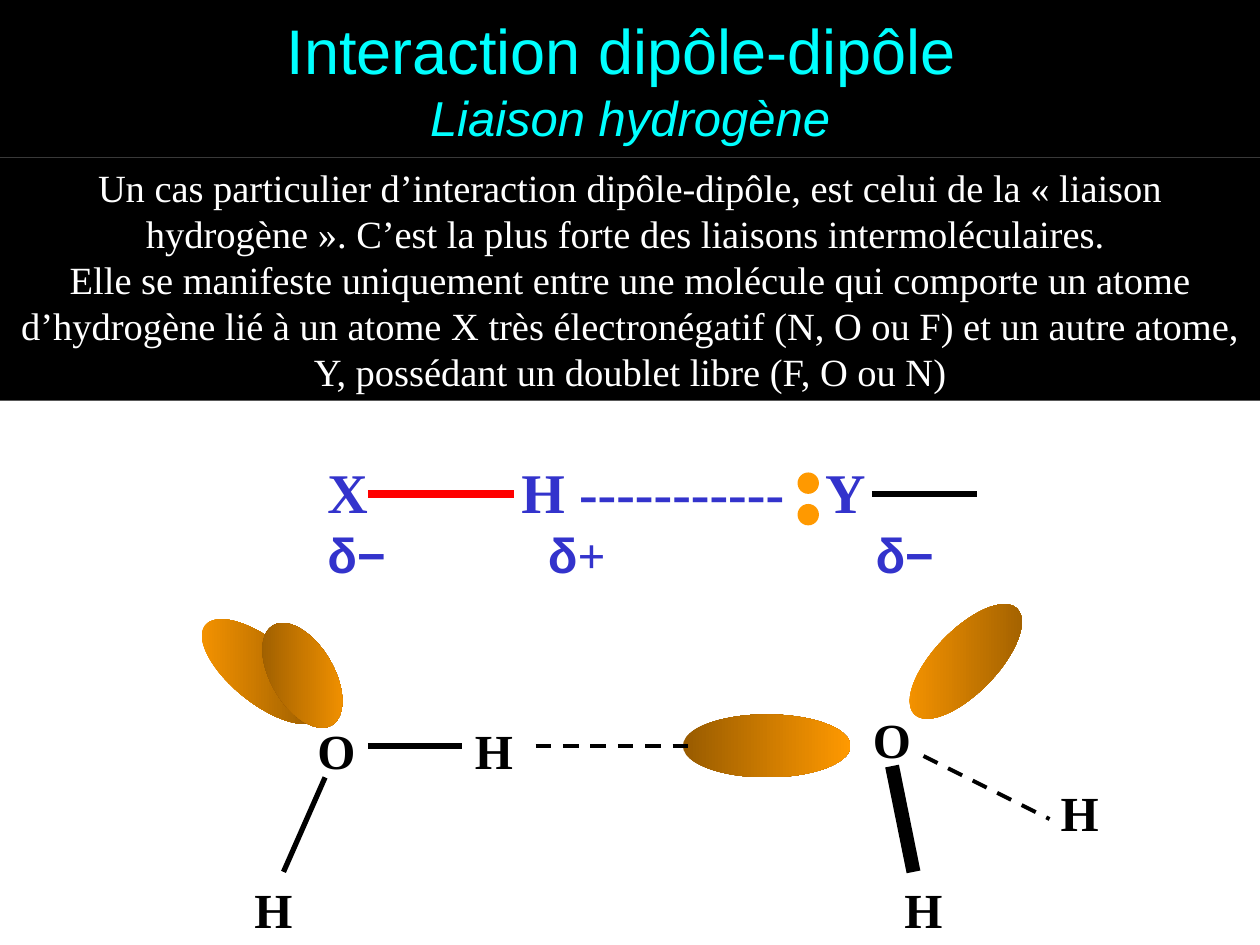
from dataclasses import dataclass

from pptx import Presentation
from pptx.dml.color import RGBColor
from pptx.enum import dml, shapes, text
from pptx.oxml import ns, xmlchemy
from pptx.util import Inches, Pt


@dataclass(frozen=True)
class Theme:
    black: str = "000000"
    white: str = "FFFFFF"
    title: str = "00FFFF"
    formula: str = "3333CC"
    polar_bond: str = "FF0000"
    doublet: str = "FF9900"
    sans: str = "Arial"
    serif: str = "Times New Roman"
    title_size: int = 36
    subtitle_size: int = 28
    body_size: int = 22
    formula_size: int = 32
    label_size: int = 28


THEME = Theme()


def rgb(value):
    return RGBColor.from_string(value)


def box(*values):
    return [Inches(value) for value in values]


def xml_child(parent, tag, **attributes):
    child = xmlchemy.OxmlElement(tag)
    for key, value in attributes.items():
        child.set(key, str(value))
    parent.append(child)
    return child


def add_run(paragraph, words, size, color, font=THEME.serif, bold=False, italic=False):
    run = paragraph.add_run()
    run.text = words
    run.font.name = font
    run.font.size = Pt(size)
    run.font.bold = bold
    run.font.italic = italic
    run.font.color.rgb = rgb(color)


def paint(shape, color):
    shape.fill.solid()
    shape.fill.fore_color.rgb = rgb(color)


def add_title(slide):
    title = slide.shapes.title
    title.left, title.top, title.width, title.height = box(0, 0, 10, 1.25)
    paint(title, THEME.black)
    frame = title.text_frame
    frame.vertical_anchor = text.MSO_ANCHOR.MIDDLE
    frame.auto_size = text.MSO_AUTO_SIZE.NONE
    heading = frame.paragraphs[0]
    heading.alignment = text.PP_ALIGN.CENTER
    add_run(heading, "Interaction dipôle-dipôle ", THEME.title_size, THEME.title, THEME.sans)
    heading.add_line_break()
    line_break = heading._p.find(ns.qn("a:br"))
    xml_child(line_break, "a:rPr", sz=THEME.title_size * 100)
    add_run(heading, "Liaison hydrogène", THEME.subtitle_size, THEME.title, THEME.sans,
            italic=True)


def add_definition(slide, sentences):
    definition = slide.shapes.add_textbox(*box(0, 1.25, 10, 1.93))
    paint(definition, THEME.black)
    frame = definition.text_frame
    frame.word_wrap = True
    for index, sentence in enumerate(sentences):
        paragraph = frame.add_paragraph() if index else frame.paragraphs[0]
        paragraph.alignment = text.PP_ALIGN.CENTER
        add_run(paragraph, sentence, THEME.body_size, THEME.white)


def add_atom(slide, symbol, left, top):
    atom = slide.shapes.add_textbox(*box(left, top, 0.5, 0.57))
    atom.text_frame.word_wrap = False
    add_run(atom.text_frame.paragraphs[0], symbol, THEME.label_size, THEME.black, bold=True)


def add_bond(slide, start, end, width=3, color=THEME.black, dashed=False):
    bond = slide.shapes.add_connector(shapes.MSO_CONNECTOR.STRAIGHT, *box(*start, *end))
    bond.line.width = Pt(width)
    bond.line.color.rgb = rgb(color)
    if dashed:
        bond.line.dash_style = dml.MSO_LINE.DASH
    xml_child(bond._element.spPr, "a:effectLst")


def add_ellipse(slide, left, top, width, height):
    ellipse = slide.shapes.add_shape(shapes.MSO_SHAPE.OVAL, *box(left, top, width, height))
    ellipse.shadow.inherit = False
    ellipse.line.fill.background()
    return ellipse


def add_orbital(slide, place, colors, rotation=0):
    """Draw a lone-pair lobe shaded left to right, whatever its rotation."""
    orbital = add_ellipse(slide, *place)
    orbital.rotation = rotation
    orbital.fill.gradient()
    orbital.fill.gradient_angle = 0
    for stop, color in zip(orbital.fill.gradient_stops, colors):
        stop.color.rgb = rgb(color)
    orbital._element.spPr.find(ns.qn("a:gradFill")).set("rotWithShape", "0")


def set_tabs(paragraph, stops):
    tabs = xml_child(paragraph._p.get_or_add_pPr(), "a:tabLst")
    for stop in stops:
        xml_child(tabs, "a:tab", pos=Inches(stop), algn="l")


def add_formula(slide):
    formula = slide.shapes.add_textbox(*box(2.5, 3.58, 5.42, 1.1))
    frame = formula.text_frame
    frame.word_wrap = True
    atoms, charges = frame.paragraphs[0], frame.add_paragraph()
    set_tabs(atoms, (1.54, 3.95))
    add_run(atoms, "X\tH -----------\tY", THEME.formula_size, THEME.formula, bold=True)
    set_tabs(charges, (1.75, 4.35))
    for words, font in (("δ−\tδ", THEME.sans), ("+\t", THEME.serif), ("δ−", THEME.sans)):
        add_run(charges, words, THEME.label_size, THEME.formula, font, bold=True)

    add_bond(slide, (2.92, 3.92), (4.08, 3.92), 4.5, THEME.polar_bond)
    for top in (3.75, 4):
        paint(add_ellipse(slide, 6.33, top, 0.17, 0.17), THEME.doublet)
    add_bond(slide, (6.92, 3.92), (7.75, 3.92))


def add_acceptor_molecule(slide):
    add_orbital(slide, (5.42, 5.67, 1.33, 0.5), ("985B00", THEME.doublet))
    add_atom(slide, "O", 6.83, 5.58)
    add_orbital(slide, (7.08, 5, 1.17, 0.5), (THEME.doublet, "985B00"), 314.1)
    add_bond(slide, (7.33, 6), (8.33, 6.5), 2.25, dashed=True)
    add_atom(slide, "H", 8.32, 6.16)
    add_bond(slide, (7.08, 6.08), (7.25, 6.92), 8)
    add_atom(slide, "H", 7.08, 6.93)


def add_donor_molecule(slide):
    add_bond(slide, (4.25, 5.92), (5.5, 5.92), 2.25, dashed=True)
    add_atom(slide, "H", 3.67, 5.67)
    add_atom(slide, "O", 2.42, 5.67)
    add_orbital(slide, (1.5, 5.08, 1.17, 0.5), (THEME.doublet, "8A5300"), 38.9)
    add_bond(slide, (2.58, 6.17), (2.25, 6.92))
    add_atom(slide, "H", 1.92, 6.93)
    add_bond(slide, (2.92, 5.92), (3.67, 5.92))
    add_orbital(slide, (1.94, 5.11, 0.92, 0.5), ("915700", THEME.doublet), 239.5)


def main():
    deck = Presentation()
    deck.slide_width, deck.slide_height = box(10, 7.5)
    slide = deck.slides.add_slide(deck.slide_layouts.get_by_name("Title Only"))
    add_title(slide)
    add_definition(slide, (
        "Un cas particulier d’interaction dipôle-dipôle, est celui de la « liaison "
        "hydrogène ». C’est la plus forte des liaisons intermoléculaires. ",
        "Elle se manifeste uniquement entre une molécule qui comporte un atome "
        "d’hydrogène lié à un atome X très électronégatif (N, O ou F) et un autre "
        "atome, Y, possédant un doublet libre (F, O ou N)",
    ))
    add_acceptor_molecule(slide)
    add_donor_molecule(slide)
    add_formula(slide)
    deck.save("out.pptx")


if __name__ == "__main__":
    main()
